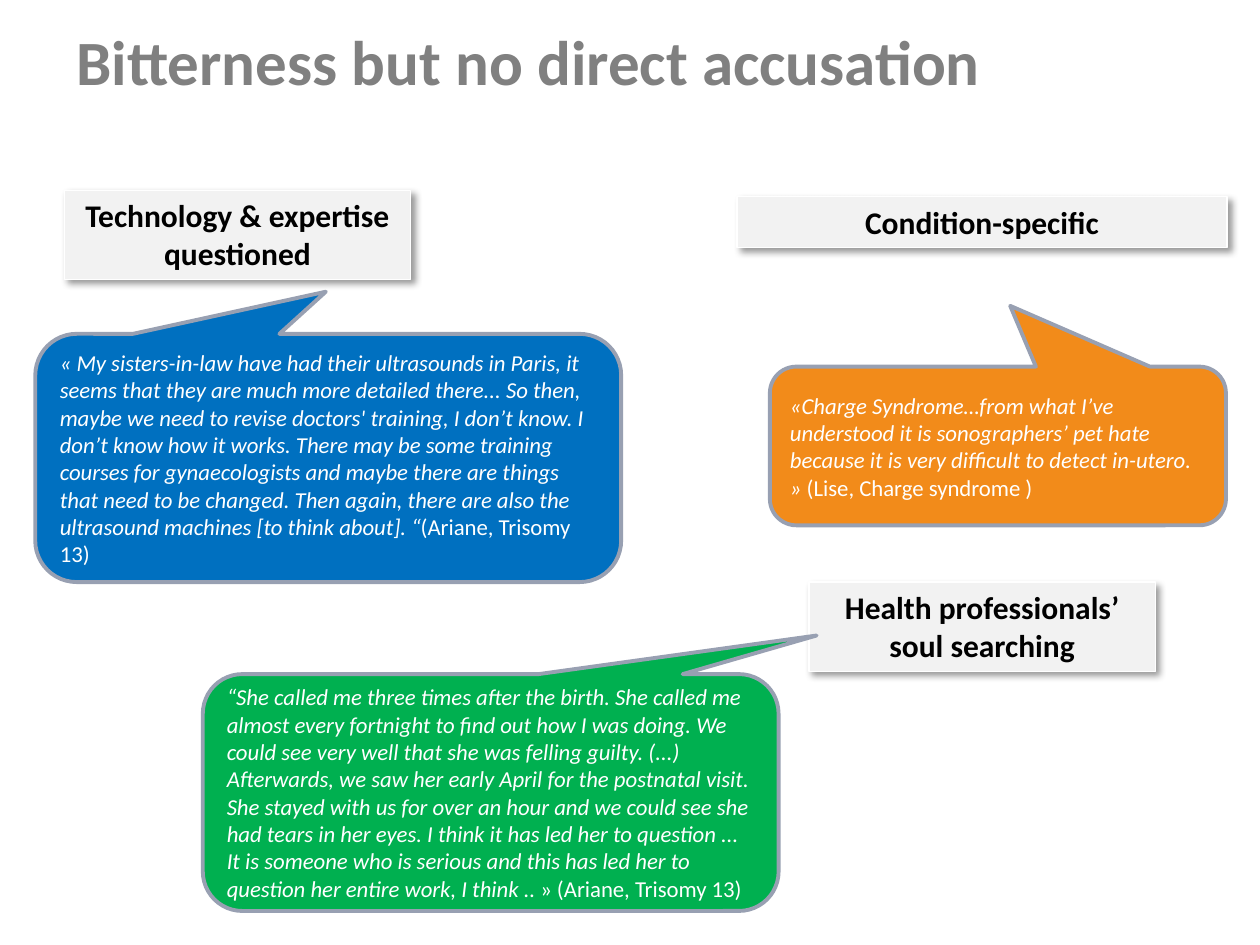
from lxml.etree import SubElement
from pptx import Presentation
from pptx.dml.color import RGBColor
from pptx.enum.shapes import MSO_SHAPE as Shape
from pptx.enum.text import MSO_ANCHOR as Anchor, PP_ALIGN as Align
from pptx.oxml import parse_xml
from pptx.oxml.ns import nsdecls
from pptx.util import Pt


def color(value):
    return RGBColor.from_string(value)


def style_run(span, size, value, bold=False, italic=False):
    span.font.name = "Calibri"
    span.font.size = Pt(size)
    span.font.bold = bold
    span.font.italic = italic
    span.font.color.rgb = color(value)


deck = Presentation()
deck.slide_width, deck.slide_height = Pt(720), Pt(540)
page = deck.slides.add_slide(deck.slide_layouts[6])

title = page.shapes.add_textbox(Pt(36.72), Pt(9.36), Pt(683.28), Pt(90))
title.text_frame.word_wrap = True
title.text_frame.text = "Bitterness but no direct accusation"
title_span = title.text_frame.paragraphs[0].runs[0]
style_run(title_span, 36, "808080", bold=True)
outline = parse_xml(
    f'<a:ln {nsdecls("a")} w="13970"><a:solidFill><a:srgbClr val="FFFFFF"/></a:solidFill></a:ln>'
)
title_span.font._element.insert(0, outline)

headings = [
    ("Technology & expertise questioned", 36.72, 108.72, 198, 51),
    ("Condition-specific", 421.2, 112.32, 280, 29),
    ("Health professionals’ soul searching", 462.24, 332.64, 198, 51),
]
for text, left, top, width, height in headings:
    box = page.shapes.add_shape(Shape.RECTANGLE, Pt(left), Pt(top), Pt(width), Pt(height))
    box.fill.solid()
    box.fill.fore_color.rgb = color("F2F2F2")
    box.line.color.rgb = color("FFFFFF")
    box.line.width = Pt(0.75)
    box.shadow.inherit = False
    effects = box._element.spPr.find("{*}effectLst")
    effects.append(parse_xml(
        f'<a:outerShdw {nsdecls("a")} blurRad="50800" dist="38100" dir="2700000" algn="tl" '
        'rotWithShape="0"><a:srgbClr val="000000"><a:alpha val="40000"/></a:srgbClr></a:outerShdw>'
    ))
    frame = box.text_frame
    frame.word_wrap = True
    frame.vertical_anchor = Anchor.TOP
    frame.text = text
    para = frame.paragraphs[0]
    para.alignment = Align.CENTER
    style_run(para.runs[0], 18, "000000", bold=True)

quotes = [
    ("«Charge Syndrome…from what I’ve understood it is sonographers’ pet hate because it is "
     "very difficult to detect in-utero. » ",
     "(Lise, Charge syndrome )",
     "F28B1A", 439.92, 209.52, 260.64, 90.72, 0.027, -0.883),
    ("« My sisters-in-law have had their ultrasounds in Paris, it seems that they are much more "
     "detailed there... So then, maybe we need to revise doctors' training, I don’t know. "
     "I don’t know how it works. There may be some training courses for gynaecologists and maybe "
     "there are things that need to be changed. Then again, there are also the ultrasound "
     "machines [to think about]. “",
     "(Ariane, Trisomy 13)",
     "0070C0", 20.16, 190.8, 334.8, 141.84, -0.004, -0.67),
    ("“She called me three times after the birth. She called me almost every fortnight to find "
     "out how I was doing. We could see very well that she was felling guilty. (...) Afterwards, "
     "we saw her early April for the postnatal visit. She stayed with us for over an hour and we "
     "could see she had tears in her eyes. I think it has led her to question ... It is someone "
     "who is serious and this has led her to question her entire work, I think .. ",
     "» (Ariane, Trisomy 13)",
     "00B050", 115.92, 385.2, 329.04, 135.36, 0.566, -0.663),
]
for quote, speaker, fill, left, top, width, height, tip_x, tip_y in quotes:
    callout = page.shapes.add_shape(
        Shape.ROUNDED_RECTANGULAR_CALLOUT, Pt(left), Pt(top), Pt(width), Pt(height))
    for index, value in enumerate((tip_x, tip_y, 0.167)):
        callout.adjustments[index] = value
    callout.shadow.inherit = False
    callout.fill.solid()
    callout.fill.fore_color.rgb = color(fill)
    callout.line.color.rgb = color("98A0B2")
    callout.line.width = Pt(2.22)
    frame = callout.text_frame
    frame.word_wrap = True
    frame.vertical_anchor = Anchor.MIDDLE
    frame.text = quote
    para = frame.paragraphs[0]
    para.alignment = Align.LEFT
    para.add_run().text = speaker
    for span, italic in zip(para.runs, (True, False)):
        style_run(span, 13, "FFFFFF", italic=italic)

deck.save("out.pptx")
